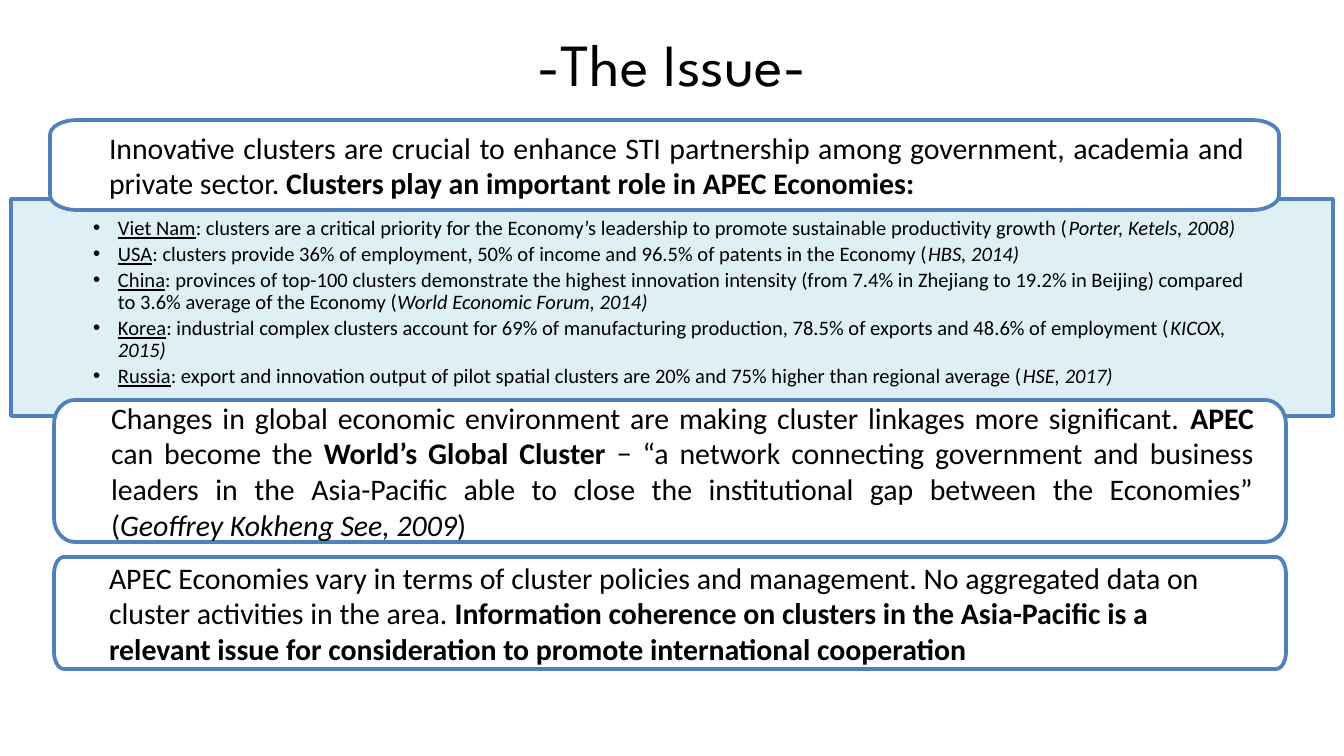
import math

import pptx
import pptx.dml.color
import pptx.enum.text
import pptx.oxml
import pptx.oxml.ns
import pptx.util

PX = 914400 * 10 / 1344  # the slide is 1344 px wide

BLACK = pptx.dml.color.RGBColor(0x00, 0x00, 0x00)
WHITE = pptx.dml.color.RGBColor(0xFF, 0xFF, 0xFF)
BLUE = pptx.dml.color.RGBColor(0x4F, 0x81, 0xBD)
PALE_BLUE = pptx.dml.color.RGBColor(0xDB, 0xEE, 0xF4)

LEFT = pptx.enum.text.PP_ALIGN.LEFT
JUSTIFY = pptx.enum.text.PP_ALIGN.JUSTIFY
CENTER = pptx.enum.text.PP_ALIGN.CENTER
TOP = pptx.enum.text.MSO_ANCHOR.TOP
MIDDLE = pptx.enum.text.MSO_ANCHOR.MIDDLE

# Economy, finding, reference
EVIDENCE = [
    ("Viet Nam", "clusters are a critical priority for the Economy’s leadership to promote "
     "sustainable productivity growth", "Porter, Ketels, 2008"),
    ("USA", "clusters provide 36% of employment, 50% of income and 96.5% of patents in the Economy",
     "HBS, 2014"),
    ("China", "provinces of top-100 clusters demonstrate the highest innovation intensity (from 7.4% "
     "in Zhejiang to 19.2% in Beijing) compared to 3.6% average of the Economy",
     "World Economic Forum, 2014"),
    ("Korea", "industrial complex clusters account for 69% of manufacturing production, 78.5% of "
     "exports and 48.6% of employment", "KICOX, 2015"),
    ("Russia", "export and innovation output of pilot spatial clusters are 20% and 75% higher than "
     "regional average", "HSE, 2017"),
]

# Box, corner radii, margins (px), alignment, runs with their style
STATEMENTS = [
    ((50, 120, 1229, 90), (27, 15), (34, 5), JUSTIFY, [
        ("Innovative clusters are crucial to enhance STI partnership among government, academia "
         "and private sector. ", ""),
        ("Clusters play an important role in APEC Economies:", "bold"),
    ]),
    ((54, 400, 1232, 142), (21, 24), (32, 4), JUSTIFY, [
        ("Changes in global economic environment are making cluster linkages more significant. ", ""),
        ("APEC", "bold"),
        (" can become the ", ""),
        ("World’s Global Cluster ", "bold"),
        ("− “a network connecting government and business leaders in the Asia-Pacific able to "
         "close the institutional gap between the Economies” (", ""),
        ("Geoffrey Kokheng See, 2009", "italic"),
        (")", ""),
    ]),
    ((54, 557, 1232, 112), (10, 17), (30, 3), LEFT, [
        ("APEC Economies vary in terms of cluster policies and management. No aggregated data on "
         "cluster activities in the area. ", ""),
        ("Information coherence on clusters in the Asia-Pacific is a relevant issue for "
         "consideration to promote international cooperation", "bold"),
    ]),
]


def px(length):
    return pptx.util.Emu(round(length * PX))


def place(shape, left, top, width, height):
    shape.left, shape.top = px(left), px(top)
    shape.width, shape.height = px(width), px(height)


def paint(shape, fill_color):
    shape.fill.solid()
    shape.fill.fore_color.rgb = fill_color
    shape.line.color.rgb = BLUE
    shape.line.width = pptx.util.Pt(2)


def set_frame(frame, anchor, side, top, bottom):
    frame.word_wrap = True
    frame.auto_size = pptx.enum.text.MSO_AUTO_SIZE.NONE
    frame.vertical_anchor = anchor
    frame.margin_left = frame.margin_right = px(side)
    frame.margin_top, frame.margin_bottom = px(top), px(bottom)


def write(paragraph, runs, size, alignment, font="Calibri", left=0, hanging=0):
    properties = paragraph._p.get_or_add_pPr()
    properties.set("marL", str(px(left)))
    properties.set("indent", str(px(-hanging)))
    paragraph.alignment = alignment
    paragraph.font.size = pptx.util.Pt(size)
    paragraph.font.name = font
    paragraph.font.color.rgb = BLACK
    for text, style in runs:
        run = paragraph.add_run()
        run.text = text
        if style:
            setattr(run.font, style, True)


def add_title(slide, text):
    title = slide.shapes.title
    place(title, 67, 0, 1210, 126)
    title.text_frame.vertical_anchor = MIDDLE
    write(title.text_frame.paragraphs[0], [(text, "")], 32, CENTER, "League Spartan")


def add_evidence(slide):
    panel = slide.placeholders[1]
    place(panel, 11, 199, 1322, 217)
    paint(panel, PALE_BLUE)
    color = panel.fill._xPr.find(".//" + pptx.oxml.ns.qn("a:srgbClr"))
    color.append(pptx.oxml.parse_xml(
        '<a:alpha %s val="90000"/>' % pptx.oxml.ns.nsdecls("a")))
    frame = panel.text_frame
    set_frame(frame, TOP, 82, 19, 12)
    for index, (economy, finding, reference) in enumerate(EVIDENCE):
        paragraph = frame.add_paragraph() if index else frame.paragraphs[0]
        paragraph.line_spacing = 0.9
        paragraph.space_before = pptx.util.Pt(0)
        paragraph.space_after = pptx.util.Pt(2)
        runs = [(economy, "underline"), (f": {finding} (", ""), (f"{reference})", "italic")]
        write(paragraph, runs, 11, LEFT, left=25, hanging=25)


def rounded_outline(left, top, width, height, radius_x, radius_y, steps=8):
    """Points of a rectangle with elliptical corners, clockwise from the left side."""
    right, bottom = left + width - radius_x, top + height - radius_y
    centers = [(left + radius_x, top + radius_y), (right, top + radius_y),
               (right, bottom), (left + radius_x, bottom)]
    points = []
    for corner, (x, y) in enumerate(centers):
        for step in range(steps + 1):
            angle = math.pi / 2 * (corner + 2 + step / steps)
            points.append((px(x + radius_x * math.cos(angle)), px(y + radius_y * math.sin(angle))))
    return points


def add_statement(slide, box, radii, margins, alignment, runs):
    points = rounded_outline(*box, *radii)
    builder = slide.shapes.build_freeform(*points[0], scale=1.0)
    builder.add_line_segments(points[1:], close=True)
    shape = builder.convert_to_shape()
    shape.shadow.inherit = False
    paint(shape, WHITE)
    side, edge = margins
    set_frame(shape.text_frame, MIDDLE, side, edge, edge)
    paragraph = shape.text_frame.paragraphs[0]
    paragraph.space_after = pptx.util.Pt(6)
    write(paragraph, runs, 16, alignment, left=25)


def main():
    presentation = pptx.Presentation()
    presentation.slide_width, presentation.slide_height = px(1344), px(756)
    slide = presentation.slides.add_slide(presentation.slide_layouts[1])

    # Heading and evidence panel
    add_title(slide, "-The Issue-")
    add_evidence(slide)

    # Statements that overlap the panel or follow it
    for statement in STATEMENTS:
        add_statement(slide, *statement)

    presentation.save("out.pptx")


if __name__ == "__main__":
    main()
